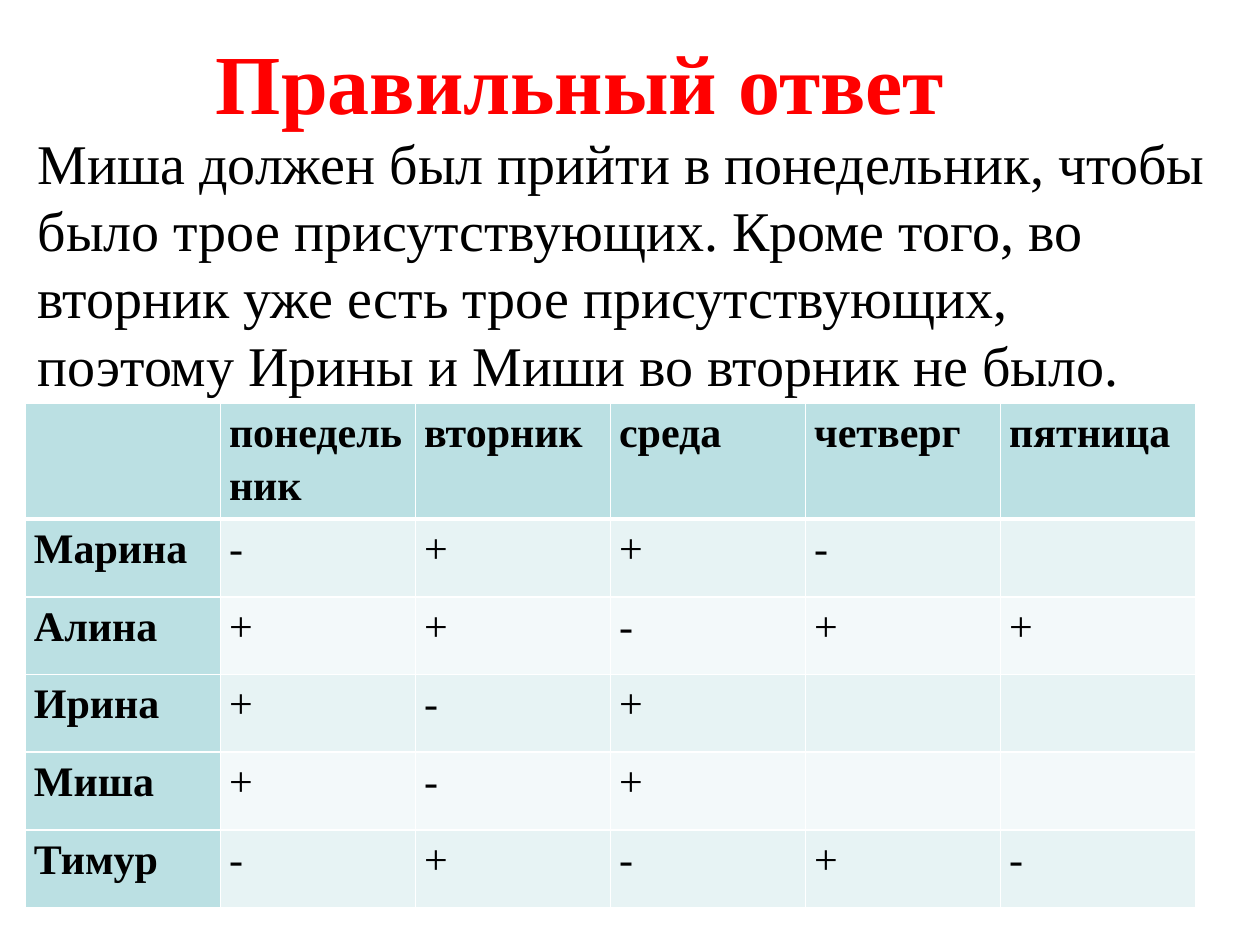
from lxml.etree import SubElement
from pptx import Presentation
from pptx.dml.color import RGBColor
from pptx.enum.text import MSO_ANCHOR, PP_ALIGN
from pptx.oxml.ns import qn
from pptx.util import Inches, Pt

DAYS = ["", "понедельник", "вторник", "среда", "четверг", "пятница"]
ATTENDANCE = [
    ["Марина", "-", "+", "+", "-", ""],
    ["Алина", "+", "+", "-", "+", "+"],
    ["Ирина", "+", "-", "+", "", ""],
    ["Миша", "+", "-", "+", "", ""],
    ["Тимур", "-", "+", "-", "+", "-"],
]
HEADING_FILL = "BBE0E3"
BAND_FILLS = ["E7F3F4", "F3F9FA"]


def color(hex_value):
    return RGBColor.from_string(hex_value)


def add_run(paragraph, text, size, hex_value="000000", bold=False):
    run = paragraph.add_run()
    run.text = text
    run.font.name = "Times New Roman"
    run.font.size = Pt(size)
    run.font.bold = bold
    run.font.color.rgb = color(hex_value)


def place_title(slide, left, top, width, height):
    title = slide.shapes.title
    title.left, title.top, title.width, title.height = left, top, width, height
    title.text_frame.vertical_anchor = MSO_ANCHOR.MIDDLE
    paragraph = title.text_frame.paragraphs[0]
    paragraph.alignment = PP_ALIGN.CENTER
    add_run(paragraph, "Правильный ответ", 48, "FF0000", True)


def add_explanation(slide, left, top, width, height):
    explanation = slide.shapes.add_textbox(left, top, width, height)
    explanation.text_frame.word_wrap = True
    add_run(
        explanation.text_frame.paragraphs[0],
        "Миша должен был прийти в понедельник, чтобы было трое присутствующих. "
        "Кроме того, во вторник уже есть трое присутствующих, "
        "поэтому Ирины и Миши во вторник не было.",
        32,
    )


def set_borders(cell, widths):
    properties = cell._tc.get_or_add_tcPr()
    for position, (side, width) in enumerate(widths.items()):
        line = SubElement(properties, qn(f"a:ln{side}"), w=str(Pt(width)))
        fill = SubElement(line, qn("a:solidFill"))
        SubElement(fill, qn("a:srgbClr"), val="FFFFFF")
        properties.insert(position, line)


def format_cell(cell, text, row, column):
    heading = row == 0 or column == 0
    cell.fill.solid()
    cell.fill.fore_color.rgb = color(HEADING_FILL if heading else BAND_FILLS[(row - 1) % 2])
    cell.margin_left = cell.margin_right = Inches(0.07)
    cell.margin_top = cell.margin_bottom = 0
    set_borders(cell, {"L": 1, "R": 1, "T": 3 if row == 1 else 1, "B": 3 if row == 0 else 1})
    if text:
        paragraph = cell.text_frame.paragraphs[0]
        paragraph.line_spacing = 1.15
        add_run(paragraph, text, 24, bold=heading)


def add_attendance(slide, left, top, width, height):
    rows = [DAYS] + ATTENDANCE
    table = slide.shapes.add_table(len(rows), len(DAYS), left, top, width, height).table
    for row, texts in enumerate(rows):
        for column, text in enumerate(texts):
            format_cell(table.cell(row, column), text, row, column)


def main():
    presentation = Presentation()
    presentation.slide_width, presentation.slide_height = Inches(10), Inches(7.5)
    slide = presentation.slides.add_slide(presentation.slide_layouts[5])
    place_title(slide, Inches(0.03), Inches(0.29), Inches(9.15), Inches(0.71))
    add_explanation(slide, Inches(0.2), Inches(0.97), Inches(9.53), Inches(2.23))
    add_attendance(slide, Inches(0.2), Inches(3.2), Inches(9.29), Inches(3.7))
    presentation.save("out.pptx")


if __name__ == "__main__":
    main()
